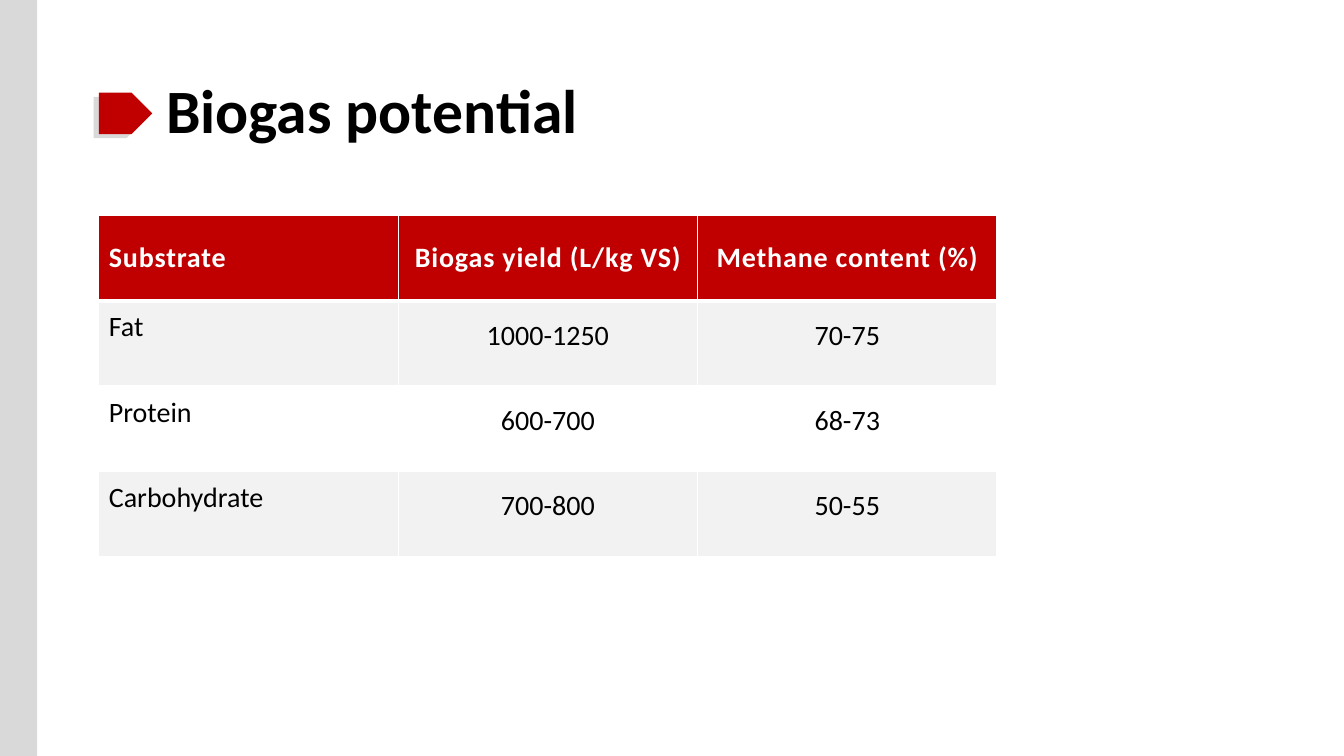
"""Build the biogas potential slide with its table of substrates."""
from lxml import etree
from pptx import Presentation
from pptx.dml.color import RGBColor
from pptx.enum.shapes import MSO_SHAPE
from pptx.enum.text import MSO_ANCHOR, PP_ALIGN
from pptx.oxml.ns import qn
from pptx.util import Inches, Pt

RECTANGLE = MSO_SHAPE.RECTANGLE
PENTAGON = MSO_SHAPE.PENTAGON
MIDDLE = MSO_ANCHOR.MIDDLE
LEFT, CENTER = PP_ALIGN.LEFT, PP_ALIGN.CENTER
COLORS = {"red": "C00000", "gray": "D9D9D9", "band": "F2F2F2",
          "white": "FFFFFF", "black": "000000"}
FONT = "Calibri"
ROWS = [
    ("Substrate", "Biogas yield (L/kg VS)", "Methane content (%)"),
    ("Fat", "1000-1250", "70-75"),
    ("Protein", "600-700", "68-73"),
    ("Carbohydrate", "700-800", "50-55"),
]
LABEL_INSETS = (0.1, 0.05, 0.1, 0.37)
VALUE_INSETS = (0.15, 0, 0.15, 0.2)


def color(name):
    return RGBColor.from_string(COLORS[name])


def add_block(page, kind, left, top, width, height, fill):
    block = page.shapes.add_shape(kind, Inches(left), Inches(top),
                                  Inches(width), Inches(height))
    block.shadow.inherit = False
    block.fill.solid()
    block.fill.fore_color.rgb = color(fill)
    block.line.fill.background()


def write_text(frame, text, size=20, ink="black", bold=False, align=LEFT,
               line_spacing=None, space_after=None, tracking=0):
    para = frame.paragraphs[0]
    para.alignment = align
    para.line_spacing = line_spacing
    if space_after:
        para.space_after = Pt(space_after)
    span = para.add_run()
    span.text = text
    span.font.name = FONT
    span.font.size = Pt(size)
    span.font.bold = bold
    span.font.color.rgb = color(ink)
    if tracking:
        span.font._element.set("spc", str(round(tracking * 100)))


def add_title(page, text):
    box = page.shapes.add_textbox(Inches(1.55), Inches(0.4), Inches(10.86), Inches(1.45))
    box.text_frame.word_wrap = True
    box.text_frame.vertical_anchor = MIDDLE
    write_text(box.text_frame, text, size=44, bold=True, line_spacing=0.9)


def set_borders(cell, bottom):
    properties = cell._tc.get_or_add_tcPr()
    widths = {"a:lnL": 1, "a:lnR": 1, "a:lnT": 1, "a:lnB": bottom}
    for position, (tag, width) in enumerate(widths.items()):
        line = etree.Element(qn(tag), w=str(Pt(width)))
        fill = etree.SubElement(line, qn("a:solidFill"))
        etree.SubElement(fill, qn("a:srgbClr"), val=COLORS["white"])
        properties.insert(position, line)


def set_insets(cell, insets):
    (cell.margin_left, cell.margin_top,
     cell.margin_right, cell.margin_bottom) = map(Inches, insets)


def fill_cell(cell, text, row, column):
    header = row == 0
    cell.vertical_anchor = MIDDLE
    cell.fill.solid()
    cell.fill.fore_color.rgb = color("red" if header else "band" if row % 2 else "white")
    set_borders(cell, bottom=3 if header else 1)
    align = CENTER if column else LEFT
    if header:
        write_text(cell.text_frame, text, ink="white", bold=True, align=align, tracking=0.6)
    elif column:
        set_insets(cell, VALUE_INSETS)
        write_text(cell.text_frame, text, align=align, line_spacing=1.15, space_after=10)
    else:
        set_insets(cell, LABEL_INSETS)
        write_text(cell.text_frame, text, align=align)


def add_yield_table(page):
    table = page.shapes.add_table(len(ROWS), len(ROWS[0]), Inches(0.98), Inches(2.14),
                                  Inches(8.91), Inches(3.38)).table
    for row, texts in enumerate(ROWS):
        for column, text in enumerate(texts):
            fill_cell(table.cell(row, column), text, row, column)


def main():
    deck = Presentation()
    deck.slide_width, deck.slide_height = Inches(13.33), Inches(7.5)
    page = deck.slides.add_slide(deck.slide_layouts[6])
    add_block(page, RECTANGLE, 0, 0, 0.37, 7.5, "gray")
    add_block(page, PENTAGON, 0.93, 0.96, 0.53, 0.41, "gray")
    add_block(page, PENTAGON, 0.98, 0.92, 0.53, 0.41, "red")
    add_title(page, "Biogas potential")
    add_yield_table(page)
    deck.save("out.pptx")


if __name__ == "__main__":
    main()
